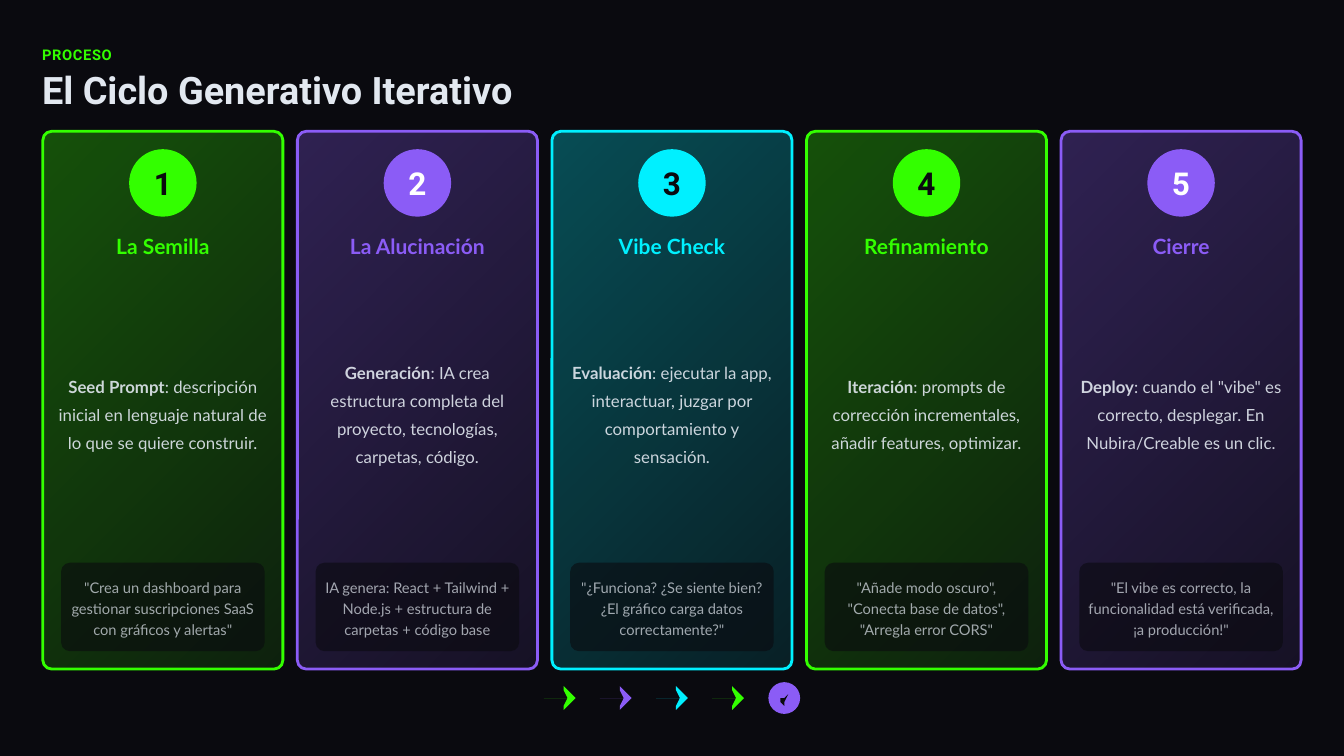
from dataclasses import dataclass

from lxml.etree import SubElement
from pptx import Presentation
from pptx.dml.color import RGBColor
from pptx.enum.shapes import MSO_SHAPE
from pptx.enum.text import MSO_ANCHOR, MSO_AUTO_SIZE, PP_ALIGN
from pptx.oxml.ns import qn
from pptx.util import Cm, Pt

OVAL = MSO_SHAPE.OVAL
ROUNDED = MSO_SHAPE.ROUNDED_RECTANGLE
MIDDLE = MSO_ANCHOR.MIDDLE
NO_AUTOFIT = MSO_AUTO_SIZE.NONE
LEFT = PP_ALIGN.LEFT
CENTER = PP_ALIGN.CENTER

DARK = RGBColor(0x0A, 0x0A, 0x0F)
LIGHT = RGBColor(0xE2, 0xE8, 0xF0)
WHITE = RGBColor(0xFF, 0xFF, 0xFF)
GREEN = RGBColor(0x33, 0xFF, 0x00)
PURPLE = RGBColor(0x8B, 0x5C, 0xF6)
CYAN = RGBColor(0x00, 0xF0, 0xFF)

# Lengths in centimetres
SLIDE_WIDTH, SLIDE_HEIGHT = 33.87, 19.05
MARGIN = 1.08
CARD_TOP, CARD_WIDTH, CARD_HEIGHT = 3.31, 6.05, 13.55
BADGE_SIZE = 1.7
ICON_SIZE, ICON_PITCH, ICON_MIDDLE = 0.8, 1.415, 17.59

# Outlines in millimetres
ARROW_TOP = [(0, 0), (0.15, -0.35), (0.5, -0.5), (6.1, -0.5), (4.6, -2.1),
             (4.55, -2.5), (4.9, -2.85), (5.35, -2.7), (7.8, -0.4), (7.95, 0)]
ARROW = ARROW_TOP + [(x, -y) for x, y in reversed(ARROW_TOP[1:-1])]
CHECK = [(1.4, -0.7), (0.1, 1.4), (-0.3, 1.6), (-0.6, 1.4), (-1.4, 0.4),
         (-1.2, -0.1), (-0.7, -0.1), (-0.35, 0.5), (0.6, -1), (1.1, -1.2)]


@dataclass
class Step:
    name: str
    lead: str
    description: str
    example: str
    color: RGBColor
    number_color: RGBColor = DARK


@dataclass
class Style:
    font: str
    size: float
    color: RGBColor
    bold: bool = False
    spacing: float = 1.0
    align: PP_ALIGN = CENTER


STEPS = [
    Step("La Semilla", "Seed Prompt",
         ": descripción inicial en lenguaje natural de lo que se quiere construir.",
         '"Crea un dashboard para gestionar suscripciones SaaS con gráficos y alertas"',
         GREEN),
    Step("La Alucinación", "Generación",
         ": IA crea estructura completa del proyecto, tecnologías, carpetas, código.",
         "IA genera: React + Tailwind + Node.js + estructura de carpetas + código base",
         PURPLE, WHITE),
    Step("Vibe Check", "Evaluación",
         ": ejecutar la app, interactuar, juzgar por comportamiento y sensación.",
         '"¿Funciona? ¿Se siente bien? ¿El gráfico carga datos correctamente?"',
         CYAN),
    Step("Refinamiento", "Iteración",
         ": prompts de corrección incrementales, añadir features, optimizar.",
         '"Añade modo oscuro", "Conecta base de datos", "Arregla error CORS"',
         GREEN),
    Step("Cierre", "Deploy",
         ': cuando el "vibe" es correcto, desplegar. En Nubira/Creable es un clic.',
         '"El vibe es correcto, la funcionalidad está verificada, ¡a producción!"',
         PURPLE, WHITE),
]


def set_alpha(element, *percents: int) -> None:
    """Give the colours inside element these opacities; the last one repeats."""
    for index, color in enumerate(element.iter(qn("a:srgbClr"))):
        percent = percents[min(index, len(percents) - 1)]
        SubElement(color, qn("a:alpha")).set("val", str(percent * 1000))


def write(shape, text: str, style: Style, inset: float = 0) -> None:
    frame = shape.text_frame
    frame.text = text
    frame.word_wrap = True
    frame.auto_size = NO_AUTOFIT
    frame.vertical_anchor = MIDDLE
    frame.margin_left = frame.margin_right = Cm(inset)
    frame.margin_top = frame.margin_bottom = 0
    paragraph = frame.paragraphs[0]
    paragraph.alignment = style.align
    paragraph.line_spacing = style.spacing
    format_run(paragraph.runs[0], style)


def format_run(run, style: Style) -> None:
    run.font.name = style.font
    run.font.size = Pt(style.size)
    run.font.bold = style.bold
    run.font.color.rgb = style.color


def add_text(slide, left: float, top: float, width: float, height: float,
             text: str, style: Style):
    box = slide.shapes.add_textbox(Cm(left), Cm(top), Cm(width), Cm(height))
    write(box, text, style)
    return box


def paint(shape, color: RGBColor) -> None:
    shape.shadow.inherit = False
    shape.fill.solid()
    shape.fill.fore_color.rgb = color
    shape.line.fill.background()


def add_filled(slide, kind: MSO_SHAPE, left: float, top: float, width: float,
               height: float, color: RGBColor):
    shape = slide.shapes.add_shape(kind, Cm(left), Cm(top), Cm(width), Cm(height))
    paint(shape, color)
    return shape


def add_outline(slide, points: list, left: float, top: float, color: RGBColor) -> None:
    builder = slide.shapes.build_freeform(*points[0], scale=Cm(0.1))
    builder.add_line_segments(points[1:])
    paint(builder.convert_to_shape(Cm(left), Cm(top)), color)


def add_card(slide, left: float, number: int, step: Step) -> None:
    card = add_filled(slide, ROUNDED, left, CARD_TOP, CARD_WIDTH, CARD_HEIGHT, step.color)
    card.adjustments[0] = 0.037
    card.fill.gradient()
    card.fill.gradient_angle = 315
    for stop in card.fill.gradient_stops:
        stop.color.rgb = step.color
    set_alpha(card.element.spPr, 30, 10)
    card.line.color.rgb = step.color
    card.line.width = Pt(2)

    badge = add_filled(slide, OVAL, left + (CARD_WIDTH - BADGE_SIZE) / 2, 3.76,
                       BADGE_SIZE, BADGE_SIZE, step.color)
    write(badge, str(number), Style("Roboto", 22.5, step.number_color, True))

    add_text(slide, left + 0.33, 5.77, 5.39, 0.74, step.name,
             Style("Lato", 15, step.color, True, 1.2))

    body = add_text(slide, left + 0.35, 6.83, 5.35, 7.04, step.lead,
                    Style("Lato", 12, LIGHT, True, 1.4))
    description = body.text_frame.paragraphs[0].add_run()
    description.text = step.description
    format_run(description, Style("Lato", 12, LIGHT))
    set_alpha(body.element, 90)

    example = add_filled(slide, ROUNDED, left + 0.46, 14.18, 5.13, 2.23, DARK)
    example.adjustments[0] = 0.1
    set_alpha(example.element.spPr, 60)
    write(example, step.example, Style("Lato", 10.5, LIGHT, spacing=1.2), 0.12)
    set_alpha(example.element.txBody, 70)


def add_icon_row(slide) -> None:
    left = (SLIDE_WIDTH - ICON_PITCH * (len(STEPS) - 1) - ICON_SIZE) / 2
    for step in STEPS[:-1]:
        add_outline(slide, ARROW, left, ICON_MIDDLE, step.color)
        left += ICON_PITCH
    add_filled(slide, OVAL, left, ICON_MIDDLE - ICON_SIZE / 2,
               ICON_SIZE, ICON_SIZE, STEPS[-1].color)
    add_outline(slide, CHECK, left + ICON_SIZE / 2, ICON_MIDDLE, DARK)


def main() -> None:
    presentation = Presentation()
    presentation.slide_width = Cm(SLIDE_WIDTH)
    presentation.slide_height = Cm(SLIDE_HEIGHT)
    slide = presentation.slides.add_slide(presentation.slide_layouts[5])
    slide.background.fill.solid()
    slide.background.fill.fore_color.rgb = DARK

    title = slide.shapes.title
    title.left, title.top, title.width, title.height = Cm(1.06), Cm(1.8), Cm(32.2), Cm(1.07)
    write(title, "El Ciclo Generativo Iterativo",
          Style("Roboto", 27, LIGHT, True, 0.9, LEFT))
    label = add_text(slide, 1.06, 1.06, 31.9, 0.53, "PROCESO",
                     Style("Roboto", 10.5, GREEN, True, 1.2, LEFT))
    label.text_frame.paragraphs[0].runs[0]._r.get_or_add_rPr().set("spc", "50")

    pitch = (SLIDE_WIDTH - 2 * MARGIN - CARD_WIDTH) / (len(STEPS) - 1)
    for index, step in enumerate(STEPS):
        add_card(slide, MARGIN + index * pitch, index + 1, step)
    add_icon_row(slide)
    presentation.save("out.pptx")


if __name__ == "__main__":
    main()
